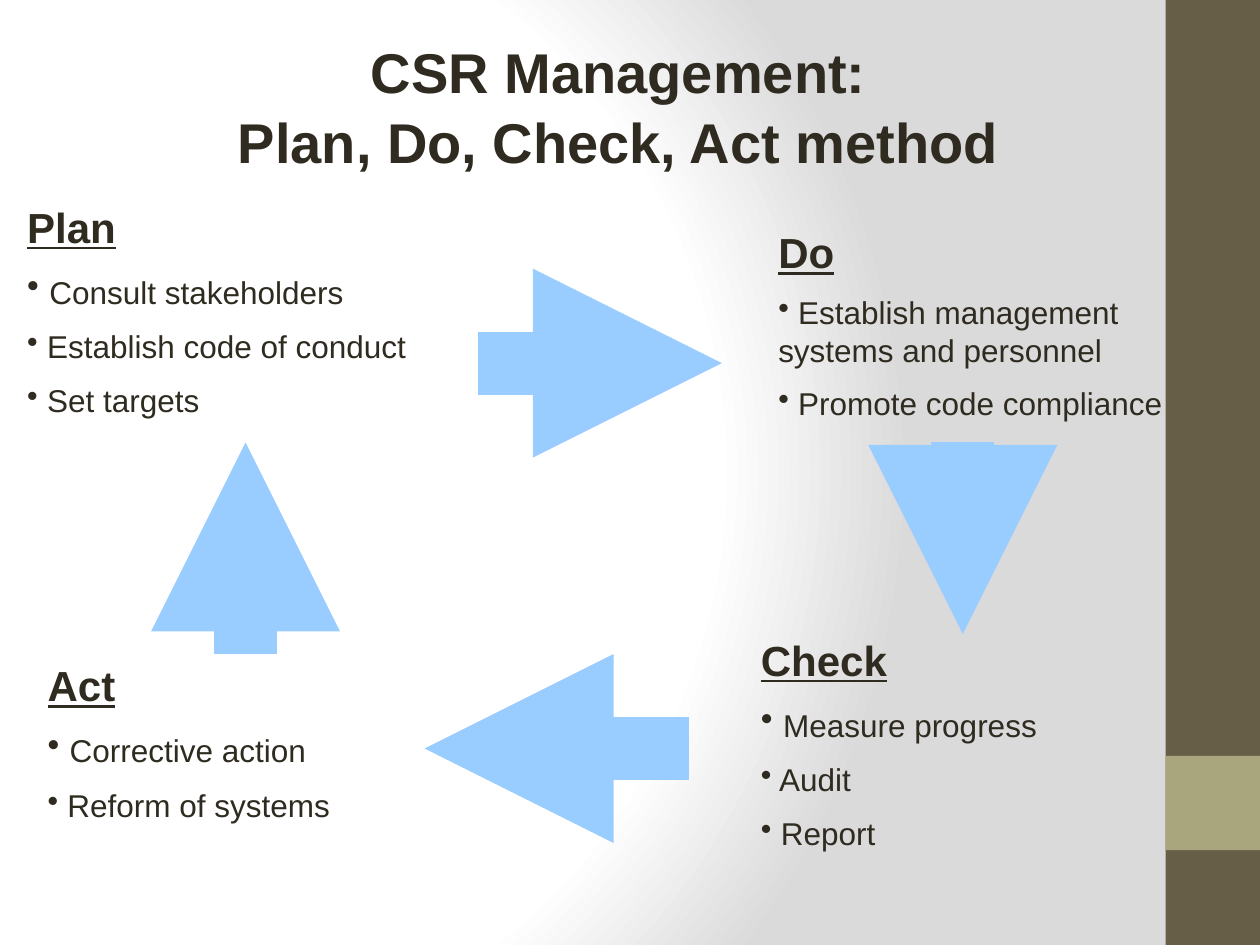
from dataclasses import dataclass

from lxml.etree import SubElement
from pptx import Presentation
from pptx.dml.color import RGBColor
from pptx.enum.shapes import MSO_CONNECTOR, MSO_SHAPE
from pptx.enum.text import MSO_ANCHOR, MSO_AUTO_SIZE, PP_ALIGN
from pptx.oxml.ns import qn
from pptx.util import Cm, Pt


@dataclass(frozen=True)
class Theme:
    """Colours, font and type sizes of the deck."""
    font: str = "Arial"
    ink: str = "2F2B20"
    arrow: str = "99CCFF"
    band: str = "675E47"
    accent: str = "A9A57C"
    light: str = "FFFFFF"
    shade: str = "DADADA"
    title: int = 32
    heading: int = 24
    lead: int = 20
    body: int = 18
    arrow_width: int = 36


THEME = Theme()
WIDTH, HEIGHT = 25.4, 19.05
BAND_WIDTH = 1.9
STEP_WIDTH = 9.32

STEPS = [
    ((0.3, 3.94, STEP_WIDTH, 4.88), "Plan",
     ["Consult stakeholders", "Establish code of conduct", "Set targets"], True),
    ((15.44, 4.45, STEP_WIDTH, 4.37), "Do",
     ["Establish management systems and personnel", "Promote code compliance"], False),
    ((15.09, 12.67, STEP_WIDTH, 4.88), "Check",
     ["Measure progress", "Audit", "Report"], True),
    ((0.71, 13.18, STEP_WIDTH, 3.81), "Act",
     ["Corrective action", "Reform of systems"], True),
]
ARROWS = [
    ((9.63, 7.32), (14.55, 7.32)),
    ((19.41, 8.92), (19.41, 12.78)),
    ((13.89, 15.09), (8.56, 15.09)),
    ((4.95, 13.18), (4.95, 8.92)),
]


def colour(value):
    """Turn a hex string into a colour."""
    return RGBColor.from_string(value)


def style(span, size, bold=False, underline=False):
    """Format one run of text."""
    font = span.font
    font.name, font.size = THEME.font, Pt(size)
    font.bold, font.underline = bold, underline
    font.color.rgb = colour(THEME.ink)


def set_background(page):
    """Fill the page with a radial gradient."""
    fill = page.background.fill
    fill.gradient()
    gradient = page.background._cSld.find(".//" + qn("a:gradFill"))
    for child in list(gradient):
        gradient.remove(child)
    stops = SubElement(gradient, qn("a:gsLst"))
    for position, value in ((0, THEME.light), (75, THEME.light), (100, THEME.shade)):
        stop = SubElement(stops, qn("a:gs"), pos=str(position * 1000))
        SubElement(stop, qn("a:srgbClr"), val=value)
    circle = SubElement(gradient, qn("a:path"), path="circle")
    SubElement(circle, qn("a:fillToRect"), l="20000", t="50000", r="100000", b="50000")


def add_side_band(page, box):
    """Draw the side band with its square accent."""
    left, top, width, height = box
    parts = ((top, height, THEME.band), (top + height * 0.8, width, THEME.accent))
    for part_top, part_height, value in parts:
        shape = page.shapes.add_shape(
            MSO_SHAPE.RECTANGLE, Cm(left), Cm(part_top), Cm(width), Cm(part_height))
        shape.shadow.inherit = False
        shape.fill.solid()
        shape.fill.fore_color.rgb = colour(value)
        shape.line.fill.background()


def add_arrow(page, start, end):
    """Draw a thick arrow between two points."""
    arrow = page.shapes.add_connector(
        MSO_CONNECTOR.STRAIGHT, *(Cm(value) for value in (*start, *end)))
    arrow.line.color.rgb = colour(THEME.arrow)
    arrow.line.width = Pt(THEME.arrow_width)
    SubElement(arrow.line._get_or_add_ln(), qn("a:tailEnd"), type="triangle")
    SubElement(arrow._element.spPr, qn("a:effectLst"))


def add_text_frame(page, box):
    """Add a wrapping text box and return its frame."""
    frame = page.shapes.add_textbox(*(Cm(value) for value in box)).text_frame
    frame.word_wrap = True
    return frame


def add_title(page, box, text):
    """Place the centred title."""
    frame = add_text_frame(page, box)
    frame.vertical_anchor = MSO_ANCHOR.MIDDLE
    para = frame.paragraphs[0]
    para.text = text
    para.alignment = PP_ALIGN.CENTER
    para.line_spacing = 1.04
    for span in para.runs:
        style(span, THEME.title, bold=True)


def set_spacing(para, bullet=False):
    """Give a paragraph half a line before it and an optional bullet."""
    properties = para._p.get_or_add_pPr()
    before = SubElement(properties, qn("a:spcBef"))
    SubElement(before, qn("a:spcPct"), val="50000")
    if bullet:
        SubElement(properties, qn("a:buChar"), char="•")


def add_step(page, box, heading, items, large_lead):
    """Place a heading with its bulleted items."""
    frame = add_text_frame(page, box)
    frame.auto_size = MSO_AUTO_SIZE.SHAPE_TO_FIT_TEXT
    para = frame.paragraphs[0]
    para.text = heading
    style(para.runs[0], THEME.heading, bold=True, underline=True)
    set_spacing(para)
    for index, item in enumerate(items):
        para = frame.add_paragraph()
        set_spacing(para, bullet=True)
        lead_size = THEME.lead if large_lead and index == 0 else THEME.body
        for text, size in ((" ", lead_size), (item, THEME.body)):
            span = para.add_run()
            span.text = text
            style(span, size)


def main():
    """Build and save the deck."""
    deck = Presentation()
    deck.slide_width, deck.slide_height = Cm(WIDTH), Cm(HEIGHT)
    page = deck.slides.add_slide(deck.slide_layouts[6])
    set_background(page)
    add_side_band(page, (WIDTH - BAND_WIDTH, 0, BAND_WIDTH, HEIGHT))
    for start, end in ARROWS:
        add_arrow(page, start, end)
    add_title(page, (-0.23, 0.53, WIDTH, 3.18),
              "CSR Management:\vPlan, Do, Check, Act method")
    for step in STEPS:
        add_step(page, *step)
    deck.save("out.pptx")


if __name__ == "__main__":
    main()
